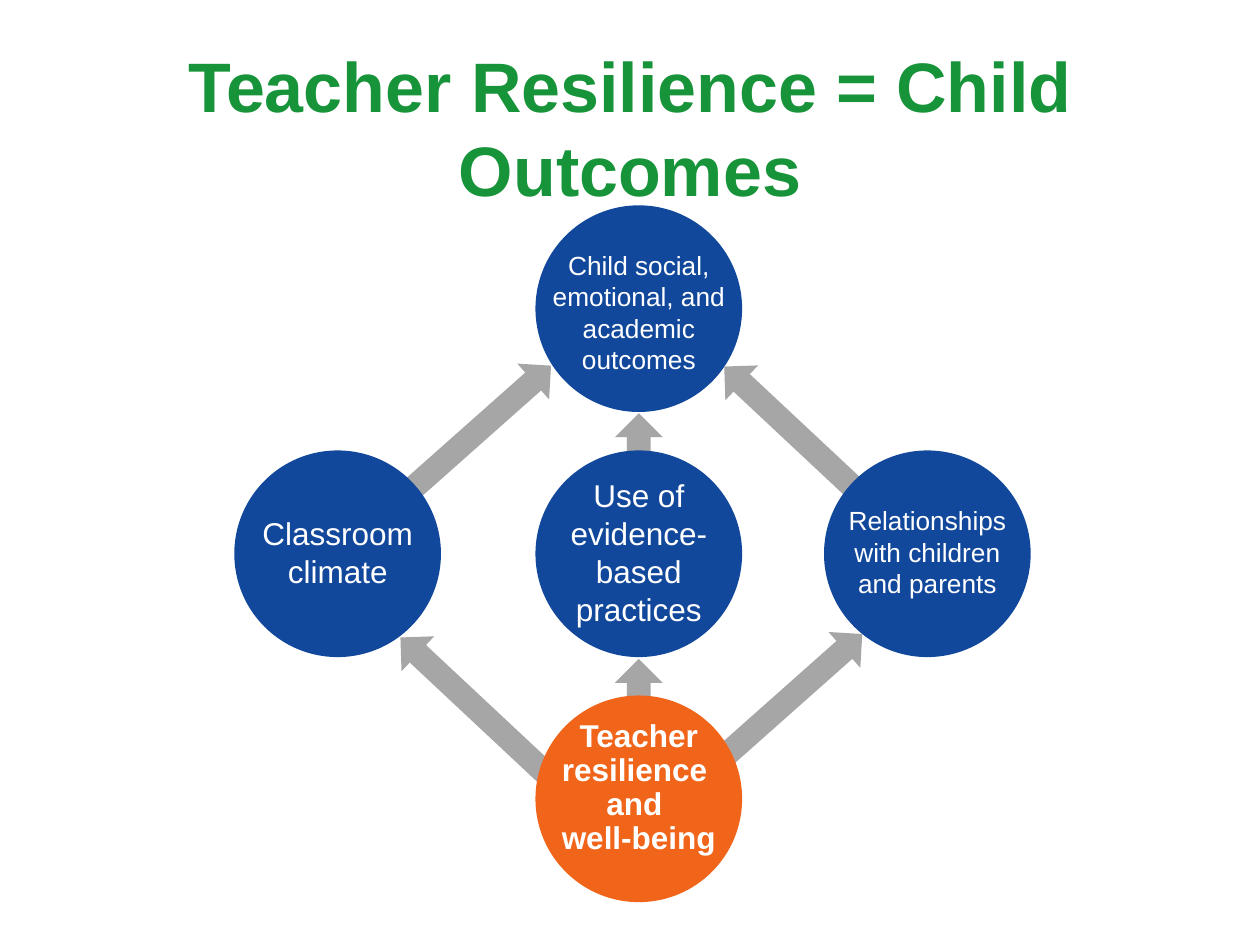
from pptx import Presentation
from pptx import util as u
from pptx.dml.color import RGBColor
from pptx.enum import shapes, text

WIDTH, HEIGHT = 10, 7.5
GREEN, BLUE, ORANGE, GREY, WHITE = "179339", "11489B", "F0651A", "A6A6A6", "FFFFFF"
COLUMNS = [1.86, 4.25, 6.54]
ROWS = [1.63 + 1.945 * row for row in range(3)]
DIAMETER = 1.64
LABEL_WIDTH, LABEL_HEIGHT = 1.65, 1.23
ARROW_WIDTH = 0.38

OUTCOMES = [
    (1, 2, "Teacher resilience \vand \vwell-being", 18, ORANGE, 0.12),
    (0, 1, "Classroom climate", 18, BLUE, 0.19),
    (1, 1, "Use of evidence-based practices", 18, BLUE, 0.19),
    (2, 1, "Relationships with children and parents", 15, BLUE, 0.19),
    (1, 0, "Child social, emotional, and academic outcomes", 15, BLUE, 0.23),
]
PATHWAYS = [
    (5.07, 5.45, 0.44, 0),
    (6.26, 5.55, 1.56, 48.4),
    (3.81, 5.65, 1.73, 313.1),
    (5.07, 3.5, 0.44, 0),
    (3.79, 3.42, 1.56, 48.4),
    (6.38, 3.5, 1.73, 313.1),
]


def color(value):
    return RGBColor.from_string(value)


def inches(box):
    return [u.Inches(length) for length in box]


def add_solid(slide, preset, box, fill):
    solid = slide.shapes.add_shape(preset, *inches(box))
    solid.shadow.inherit = False
    solid.fill.solid()
    solid.fill.fore_color.rgb = color(fill)
    solid.line.fill.background()
    return solid


def add_words(slide, box, words, size, ink, bold=False, spacing=None):
    frame = slide.shapes.add_textbox(*inches(box)).text_frame
    frame.word_wrap = True
    frame.vertical_anchor = text.MSO_ANCHOR.MIDDLE
    frame.text = words
    paragraph = frame.paragraphs[0]
    paragraph.alignment = text.PP_ALIGN.CENTER
    paragraph.line_spacing = spacing
    for run in paragraph.runs:
        run.font.name = "Arial"
        run.font.size = u.Pt(size)
        run.font.bold = bold
        run.font.color.rgb = color(ink)


def add_title(slide, box):
    add_words(slide, box, "Teacher Resilience = Child Outcomes", 40, GREEN, True)


def add_pathway(slide, center_x, center_y, length, angle):
    box = (center_x - ARROW_WIDTH / 2, center_y - length / 2, ARROW_WIDTH, length)
    arrow = add_solid(slide, shapes.MSO_SHAPE.UP_ARROW, box, GREY)
    arrow.rotation = angle


def add_outcome(slide, box, words, size, fill, drop):
    left, top, width, _ = box
    add_solid(slide, shapes.MSO_SHAPE.OVAL, box, fill)
    label = (left + (width - LABEL_WIDTH) / 2, top + drop, LABEL_WIDTH, LABEL_HEIGHT)
    root = fill == ORANGE
    add_words(slide, label, words, size, WHITE, root, 0.9 if root else None)


def main():
    deck = Presentation()
    deck.slide_width, deck.slide_height = inches((WIDTH, HEIGHT))
    slide = deck.slides.add_slide(deck.slide_layouts[6])
    add_title(slide, (0, HEIGHT * 0.05, WIDTH, HEIGHT / 6))
    for pathway in PATHWAYS:
        add_pathway(slide, *pathway)
    for column, row, *details in OUTCOMES:
        add_outcome(slide, (COLUMNS[column], ROWS[row], DIAMETER, DIAMETER), *details)
    deck.save("out.pptx")


if __name__ == "__main__":
    main()
